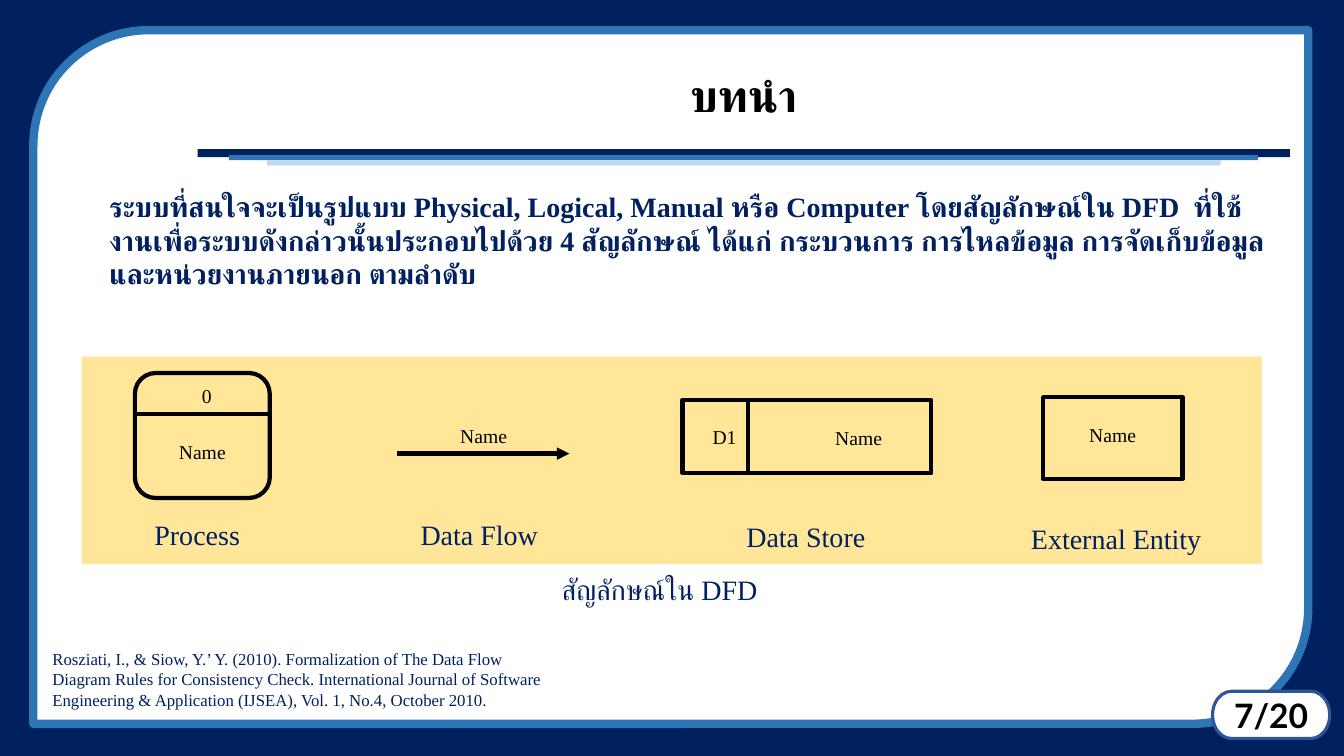
from lxml.etree import SubElement
from pptx import Presentation
from pptx.dml.color import RGBColor
from pptx.enum.shapes import MSO_CONNECTOR, MSO_SHAPE
from pptx.enum.text import MSO_ANCHOR, MSO_AUTO_SIZE, PP_ALIGN
from pptx.oxml.ns import qn
from pptx.util import Cm, Pt

NAVY, BLUE, PALE_BLUE = "002060", "2E75B6", "BDD7EE"
BLACK, WHITE, SAND, BADGE_BLUE = "000000", "FFFFFF", "FFE699", "2F5597"
SERIF = "Times New Roman"

deck = Presentation()
deck.slide_width, deck.slide_height = Cm(33.87), Cm(19.05)
slide = deck.slides.add_slide(deck.slide_layouts[6])


def add_block(kind, place, fill=None, line=None, weight=3):
    """Draw a preset shape; without a fill or line colour that part stays empty."""
    block = slide.shapes.add_shape(kind, *map(Cm, place))
    block.shadow.inherit = False
    for part, color in ((block.fill, fill), (block.line.fill, line)):
        if color:
            part.solid()
            part.fore_color.rgb = RGBColor.from_string(color)
        else:
            part.background()
    if line:
        block.line.width = Pt(weight)
    return block


def write(holder, text, size, color, bold=False, font=SERIF,
          align=PP_ALIGN.CENTER, spacing=1.0, **frame_format):
    """Put one formatted paragraph in a shape, or in a new text box at a place."""
    if isinstance(holder, tuple):
        holder = slide.shapes.add_textbox(*map(Cm, holder))
    frame = holder.text_frame
    for key, value in {"word_wrap": True, **frame_format}.items():
        setattr(frame, key, value)
    paragraph = frame.paragraphs[0]
    paragraph.alignment, paragraph.line_spacing = align, spacing
    run = paragraph.add_run()
    run.text = text
    for key, value in {"size": Pt(size), "bold": bold, "name": font}.items():
        setattr(run.font, key, value)
    run.font.color.rgb = RGBColor.from_string(color)
    # Thai letters take the complex-script font
    SubElement(run.font._element, qn("a:cs"), typeface=font)


# Backdrop, rounded frame and title rule
add_block(MSO_SHAPE.RECTANGLE, (0, 0, 33.87, 19.05), NAVY)
add_block(MSO_SHAPE.ROUND_2_DIAG_RECTANGLE, (0.84, 0.76, 32.13, 17.48), WHITE, BLUE, 6)
for place, color in [
    ((4.98, 3.76, 27.53, 0.2), NAVY),
    ((5.77, 3.91, 25.93, 0.13), BLUE),
    ((6.73, 4.04, 24.03, 0.13), PALE_BLUE),
]:
    add_block(MSO_SHAPE.RECTANGLE, place, color)

# Title, introduction, caption and reference
grow = {"auto_size": MSO_AUTO_SIZE.SHAPE_TO_FIT_TEXT}
write((4.98, 1.24, 27.53, 2.46), "บทนำ", 32, BLACK, bold=True, spacing=0.9,
      vertical_anchor=MSO_ANCHOR.MIDDLE)
write((2.51, 4.65, 29.79, 3.84),
      "ระบบที่สนใจจะเป็นรูปแบบ Physical, Logical, Manual หรือ Computer "
      "โดยสัญลักษณ์ใน DFD  ที่ใช้งานเพื่อระบบดังกล่าวนั้นประกอบไปด้วย 4 สัญลักษณ์ "
      "ได้แก่ กระบวนการ การไหลข้อมูล การจัดเก็บข้อมูล และหน่วยงานภายนอก ตามลำดับ",
      20, NAVY, bold=True, align=PP_ALIGN.LEFT, **grow)
write((9.19, 13.87, 14.86, 1.9), "สัญลักษณ์ใน DFD", 20, NAVY, spacing=1.5, **grow)
write((1.07, 16.23, 13.23, 1.8),
      "Rosziati, I., & Siow, Y.’ Y. (2010). Formalization of The Data Flow Diagram "
      "Rules for Consistency Check. International Journal of Software Engineering & "
      "Application (IJSEA), Vol. 1, No.4, October 2010.",
      12, NAVY, align=PP_ALIGN.LEFT, **grow)

# Symbol panel: outlines, lines, inner texts and symbol names
add_block(MSO_SHAPE.RECTANGLE, (2.06, 8.99, 29.74, 5.23), SAND)
for kind, place in [
    (MSO_SHAPE.ROUNDED_RECTANGLE, (3.4, 9.4, 3.4, 3.15)),
    (MSO_SHAPE.RECTANGLE, (17.2, 10.08, 6.27, 1.85)),
    (MSO_SHAPE.RECTANGLE, (26.29, 10.01, 3.51, 2.06)),
]:
    add_block(kind, place, line=BLACK)

for ends, is_arrow in [
    ((3.45, 10.44, 6.83, 10.44), False),
    ((10.01, 11.43, 14.35, 11.43), True),
    ((18.85, 10.08, 18.85, 11.93), False),
]:
    stroke = slide.shapes.add_connector(MSO_CONNECTOR.STRAIGHT, *map(Cm, ends))
    stroke.line.width = Pt(3)
    stroke.line.color.rgb = RGBColor.from_string(BLACK)
    if is_arrow:
        SubElement(stroke.line._get_or_add_ln(), qn("a:tailEnd"), type="triangle")
    SubElement(stroke._element.spPr, qn("a:effectLst"))

for left, top, inner_text in [
    (3.45, 10.97, "Name"), (3.56, 9.55, "0"), (10.54, 10.57, "Name"),
    (19.99, 10.62, "Name"), (16.61, 10.59, "D1"), (26.39, 10.52, "Name"),
]:
    write((left, top, 3.3, 0.86), inner_text, 14, BLACK, **grow)

for left, top, symbol in [
    (2.57, 12.5, "Process"), (9.68, 12.5, "Data Flow"),
    (17.91, 12.55, "Data Store"), (25.73, 12.6, "External Entity"),
]:
    write((left, top, 4.8, 1.37), symbol, 20, NAVY, spacing=1.5, **grow)

# Page badge
badge = add_block(MSO_SHAPE.FLOWCHART_TERMINATOR, (30.56, 17.42, 2.95, 1.19),
                  WHITE, BADGE_BLUE, 2.25)
write(badge, "7/20", 24, BLACK, bold=True, font="Lato",
      vertical_anchor=MSO_ANCHOR.MIDDLE)

deck.save("out.pptx")
